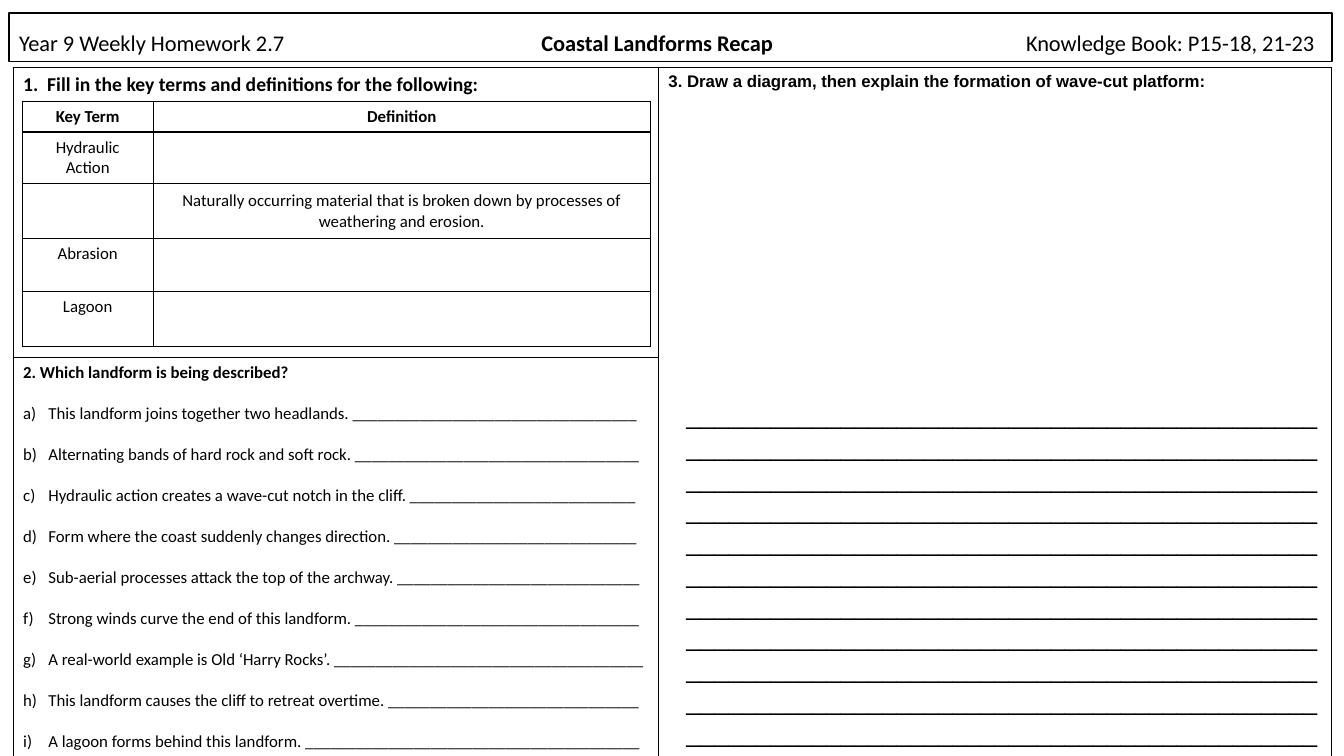
from dataclasses import dataclass

from lxml import etree
from pptx import Presentation
from pptx.dml.color import RGBColor
from pptx.enum.shapes import MSO_SHAPE
from pptx.enum.text import MSO_ANCHOR, PP_ALIGN
from pptx.oxml.ns import qn
from pptx.util import Inches, Pt

RECT = MSO_SHAPE.RECTANGLE
TOP, MIDDLE, BOTTOM = MSO_ANCHOR.TOP, MSO_ANCHOR.MIDDLE, MSO_ANCHOR.BOTTOM
LEFT, CENTER = PP_ALIGN.LEFT, PP_ALIGN.CENTER


@dataclass(frozen=True)
class Theme:
    ink: RGBColor = RGBColor(0, 0, 0)
    paper: RGBColor = RGBColor(255, 255, 255)
    body: str = "Calibri"
    alt: str = "Arial"
    title: int = 16
    head: int = 14
    text: int = 12
    rule: int = 18
    line: int = 1


THEME = Theme()

HEADER = ("Year 9 Weekly Homework 2.7", "Coastal Landforms Recap",
          "Knowledge Book: P15-18, 21-23")
TASKS = ("1.  Fill in the key terms and definitions for the following:",
         "2. Which landform is being described?",
         "3. Draw a diagram, then explain the formation of wave-cut platform:")
TERMS = (
    ("Key Term", "Definition"),
    ("Hydraulic Action", ""),
    ("", "Naturally occurring material that is broken down by processes of "
         "weathering and erosion."),
    ("Abrasion", ""),
    ("Lagoon", ""),
)
# Each clue with the length of its answer blank
CLUES = (
    ("This landform joins together two headlands.", 34),
    ("Alternating bands of hard rock and soft rock.", 34),
    ("Hydraulic action creates a wave-cut notch in the cliff.", 27),
    ("Form where the coast suddenly changes direction.", 29),
    ("Sub-aerial processes attack the top of the archway.", 29),
    ("Strong winds curve the end of this landform.", 34),
    ("A real-world example is Old ‘Harry Rocks’.", 37),
    ("This landform causes the cliff to retreat overtime.", 30),
    ("A lagoon forms behind this landform.", 40),
)
LINES, DASHES = 11, 45


def style(para, size, bold=False, face=THEME.body):
    for run in para.runs:
        font = run.font
        font.name, font.size, font.bold = face, Pt(size), bold
        font.color.rgb = THEME.ink


def write(para, text, size, bold=False, face=THEME.body, align=LEFT):
    para.text = text
    para.alignment = align
    style(para, size, bold, face)


def set_tabs(para, stops):
    tabs = etree.SubElement(para._p.get_or_add_pPr(), qn("a:tabLst"))
    for pos, side in stops:
        etree.SubElement(tabs, qn("a:tab"), pos=str(Inches(pos)), algn=side)


def letter(para):
    """Number the paragraph a), b), c) with a hanging indent."""
    props = para._p.get_or_add_pPr()
    props.set("marL", str(Inches(0.25)))
    props.set("indent", str(-Inches(0.25)))
    etree.SubElement(props, qn("a:buFont"), typeface="+mj-lt")
    etree.SubElement(props, qn("a:buAutoNum"), type="alphaLcParenR")


def border(cell):
    props = cell._tc.get_or_add_tcPr()
    for spot, side in enumerate(("lnL", "lnR", "lnT", "lnB")):
        edge = etree.Element(qn(f"a:{side}"), w=str(Pt(THEME.line)))
        fill = etree.SubElement(edge, qn("a:solidFill"))
        etree.SubElement(fill, qn("a:srgbClr"), val=str(THEME.ink))
        props.insert(spot, edge)


def add_grid(slide, left, top, cols, rows, fill=None):
    """Add a ruled table with the given column widths and row heights."""
    table = slide.shapes.add_table(
        len(rows), len(cols), Inches(left), Inches(top),
        Inches(sum(cols)), Inches(sum(rows))).table
    table.first_row = table.horz_banding = False
    for col, width in zip(table.columns, cols):
        col.width = Inches(width)
    for row, height in zip(table.rows, rows):
        row.height = Inches(height)
    for cell in table.iter_cells():
        if fill is None:
            cell.fill.background()
        else:
            cell.fill.solid()
            cell.fill.fore_color.rgb = fill
        border(cell)
    return table


def add_header(slide, left, top, width, height):
    bar = slide.shapes.add_shape(
        RECT, Inches(left), Inches(top), Inches(width), Inches(height))
    bar.shadow.inherit = False
    bar.fill.solid()
    bar.fill.fore_color.rgb = THEME.paper
    bar.line.color.rgb = THEME.ink
    bar.line.width = Pt(THEME.line)
    frame = bar.text_frame
    frame.word_wrap = True
    frame.vertical_anchor = BOTTOM
    para = frame.paragraphs[0]
    para.alignment = LEFT
    para.line_spacing = 0.9
    for part in (HEADER[0], "\t", HEADER[1], "\t", HEADER[2]):
        para.add_run().text = part
    style(para, THEME.title)
    para.runs[2].font.bold = True
    set_tabs(para, ((width / 2 - 0.23, "ctr"), (width - 0.27, "r")))


def add_clues(frame):
    write(frame.paragraphs[0], TASKS[1], THEME.text, True)
    for clue, blank in CLUES:
        para = frame.add_paragraph()
        write(para, f"{clue} {'_' * blank}", THEME.text)
        para.line_spacing = 2.0
        letter(para)


def add_tasks(slide, left, top):
    table = add_grid(slide, left, top, (6.4, 6.68), (2.88, 3.64))
    table.cell(0, 1).merge(table.cell(1, 1))
    write(table.cell(0, 0).text_frame.paragraphs[0], TASKS[0],
          THEME.head, True)
    write(table.cell(0, 1).text_frame.paragraphs[0], TASKS[2],
          THEME.text, True, THEME.alt)
    add_clues(table.cell(1, 0).text_frame)


def add_rules(slide, left, top, width, height):
    """Add the ruled writing lines as one wrapped run."""
    box = slide.shapes.add_textbox(
        Inches(left), Inches(top), Inches(width), Inches(height))
    frame = box.text_frame
    frame.word_wrap = True
    para = frame.paragraphs[0]
    write(para, "_" * (LINES * DASHES), THEME.rule, face=THEME.alt)
    para.line_spacing = 1.05


def add_terms(slide, left, top):
    table = add_grid(slide, left, top, (1.3, 4.93),
                     (0.3, 0.51, 0.55, 0.52, 0.55), THEME.paper)
    for r, row in enumerate(TERMS):
        for c, text in enumerate(row):
            cell = table.cell(r, c)
            cell.vertical_anchor = MIDDLE if c else TOP
            write(cell.text_frame.paragraphs[0], text, THEME.text,
                  r == 0, align=CENTER)


def main():
    deck = Presentation()
    deck.slide_width, deck.slide_height = Inches(13.33), Inches(7.5)
    slide = deck.slides.add_slide(deck.slide_layouts[6])
    add_header(slide, 0.09, 0.13, 13.12, 0.48)
    add_tasks(slide, 0.13, 0.67)
    add_rules(slide, 6.71, 3.9, 6.47, 3.46)
    add_terms(slide, 0.22, 1.01)
    deck.save("out.pptx")


if __name__ == "__main__":
    main()
